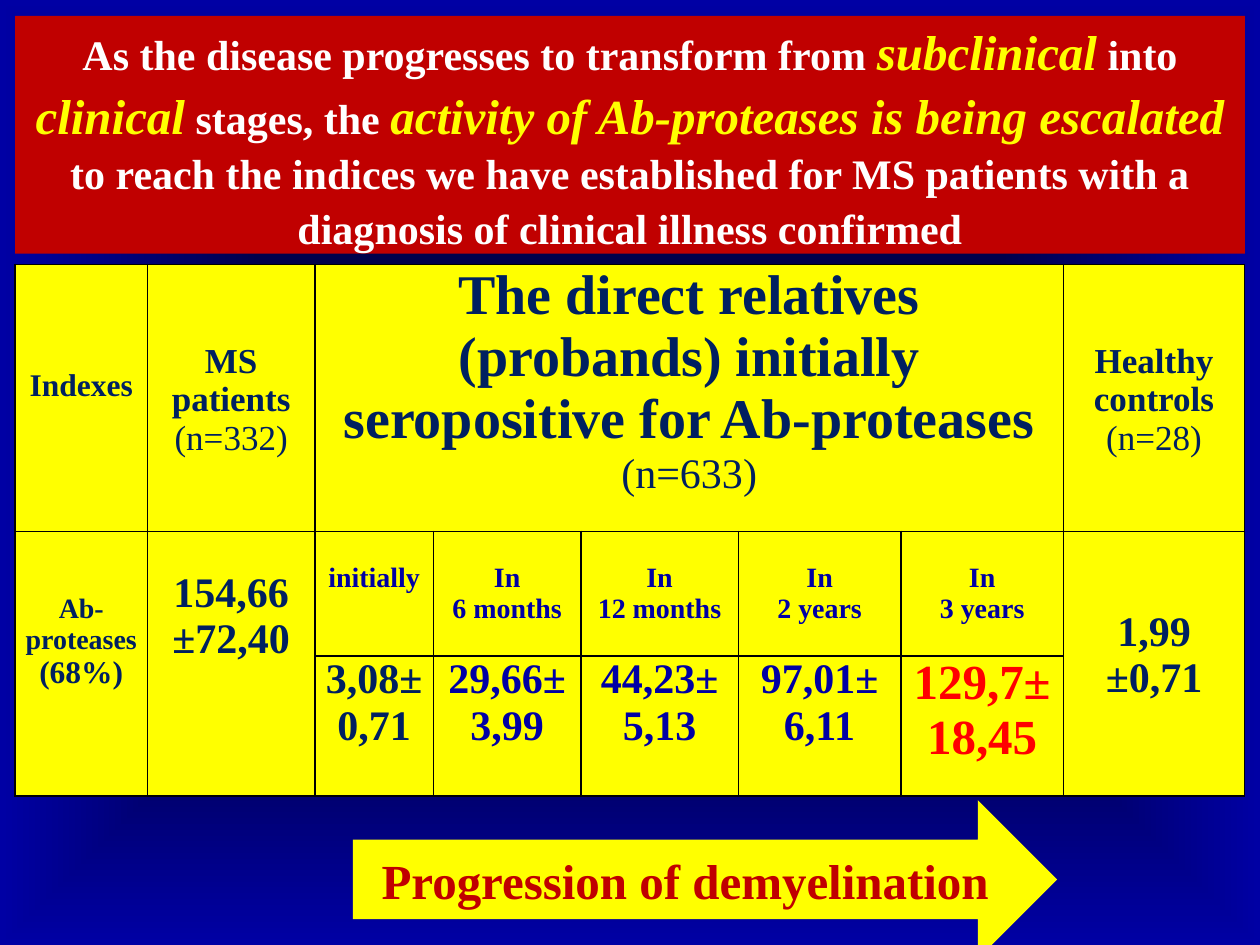
from pptx import Presentation
from pptx.dml.color import RGBColor
from pptx.enum.shapes import MSO_SHAPE
from pptx.enum.text import MSO_ANCHOR, PP_ALIGN
from pptx.oxml import parse_xml
from pptx.oxml.ns import nsdecls, qn
from pptx.util import Pt

ARROW = MSO_SHAPE.RIGHT_ARROW
MIDDLE = MSO_ANCHOR.MIDDLE
CENTER = PP_ALIGN.CENTER

FONT = "Times New Roman"
LINE = 1.107
COLORS = {
    "black": "000000", "blue": "0000A4", "navy": "002060", "white": "FFFFFF",
    "yellow": "FFFF00", "crimson": "C00000", "red": "FF0000",
}


def rgb(name):
    return RGBColor.from_string(COLORS[name])


def write(par, text, size=24, color="navy", bold=True, italic=False):
    par.alignment = CENTER
    run = par.add_run()
    run.text = text
    font = run.font
    font.name, font.size = FONT, Pt(size)
    font.bold, font.italic = bold, italic
    font.color.rgb = rgb(color)


class Deck:
    def __init__(self, wide, high):
        self.prs = Presentation()
        self.prs.slide_width, self.prs.slide_height = Pt(wide), Pt(high)
        self.slide = self.prs.slides.add_slide(self.prs.slide_layouts[5])

    def backdrop(self, inner, outer):
        fill = self.slide.background.fill
        fill.gradient()
        for stop, name in zip(fill.gradient_stops, (inner, outer)):
            stop.color.rgb = rgb(name)
        grad = self.slide._element.find(".//" + qn("a:gradFill"))
        path = parse_xml(
            f'<a:path {nsdecls("a")} path="shape">'
            '<a:fillToRect l="50000" t="50000" r="50000" b="50000"/></a:path>')
        grad.replace(grad.find(qn("a:lin")), path)

    def place(self, shape, box, fill):
        shape.left, shape.top, shape.width, shape.height = map(Pt, box)
        shape.fill.solid()
        shape.fill.fore_color.rgb = rgb(fill)
        frame = shape.text_frame
        frame.word_wrap = True
        frame.vertical_anchor = MIDDLE
        return frame.paragraphs[0]

    def title(self, box, parts, fill):
        par = self.place(self.slide.shapes.title, box, fill)
        par.line_spacing = 1.08
        for text, key in parts:
            if key:
                write(par, text, size=28, color="yellow", italic=True)
            else:
                write(par, text, color="white")

    def arrow(self, box, text, fill, **style):
        shape = self.slide.shapes.add_shape(ARROW, *map(Pt, box))
        shape.shadow.inherit = False
        shape.line.fill.background()
        write(self.place(shape, box, fill), text, **style)

    def border(self, cell):
        props = cell._tc.get_or_add_tcPr()
        for spot, side in enumerate(("lnL", "lnR", "lnT", "lnB")):
            props.insert(spot, parse_xml(
                f'<a:{side} {nsdecls("a")} w="{Pt(1)}"><a:solidFill>'
                f'<a:srgbClr val="{COLORS["black"]}"/></a:solidFill></a:{side}>'))

    def table(self, left, top, cols, rows, fill):
        grid = self.slide.shapes.add_table(
            len(rows), len(cols), Pt(left), Pt(top), Pt(sum(cols)), Pt(sum(rows))).table
        for col, width in zip(grid.columns, cols):
            col.width = Pt(width)
        for row, height in zip(grid.rows, rows):
            row.height = Pt(height)
        for cell in grid.iter_cells():
            cell.fill.solid()
            cell.fill.fore_color.rgb = rgb(fill)
            cell.margin_left = cell.margin_right = Pt(5)
            cell.margin_top = cell.margin_bottom = 0
            self.border(cell)
        return grid

    def fill_cell(self, cell, lines, drop=0):
        cell.margin_top = Pt(round(drop * LINE, 2))
        frame = cell.text_frame
        for spot, (text, style) in enumerate(lines):
            par = frame.add_paragraph() if spot else frame.paragraphs[0]
            write(par, text, **style)


def main():
    deck = Deck(720, 540)
    deck.backdrop("black", "blue")
    deck.title((8.64, 9, 702.72, 136), [
        ("As the disease progresses to transform from ", False),
        ("subclinical", True),
        (" into ", False),
        ("clinical", True),
        (" stages, the ", False),
        ("activity of Ab-proteases is being escalated ", True),
        ("to reach the indices we have established for MS patients "
         "with a diagnosis of clinical illness confirmed", False),
    ], "crimson")

    grid = deck.table(8.64, 151, [75.6, 95.8, 67.7, 84.2, 90, 92.9, 92.9, 103.6],
                      [152.6, 71.4, 80], "yellow")
    grid.cell(0, 2).merge(grid.cell(0, 6))
    for col in (0, 1, 7):
        grid.cell(1, col).merge(grid.cell(2, col))

    big, mid, small = {"size": 24}, {"size": 18}, {"size": 16}
    head, count = {"size": 20}, {"size": 20, "bold": False}
    fixed = [
        (0, 0, 54, [("Indexes", mid)]),
        (0, 1, 40, [("MS patients", head), ("(n=332)", count)]),
        (0, 2, 0, [("The direct relatives (probands) initially seropositive "
                    "for Ab-proteases", {"size": 32}),
                   ("(n=633)", {"size": 24, "bold": False})]),
        (0, 7, 40, [("Healthy controls", head), ("(n=28)", count)]),
        (1, 0, 32, [("Ab-proteases", small), ("(68%)", mid)]),
        (1, 1, 20, [("154,66", big), ("±72,40", big)]),
        (1, 7, 40, [("1,99", big), ("±0,71", big)]),
    ]
    for row, col, drop, lines in fixed:
        deck.fill_cell(grid.cell(row, col), lines, drop)

    blue = {"size": 24, "color": "blue"}
    stages = [
        (["initially"], "3,08±", "0,71", big),
        (["In", "6 months"], "29,66±", "3,99", blue),
        (["In", "12 months"], "44,23±", "5,13", blue),
        (["In", "2 years"], "97,01±", "6,11", blue),
        (["In", "3 years"], "129,7±", "18,45", {"size": 28, "color": "red"}),
    ]
    for col, (label, mean, error, style) in enumerate(stages, 2):
        names = [(text, {"size": 16, "color": "blue"}) for text in label]
        deck.fill_cell(grid.cell(1, col), names, 16)
        deck.fill_cell(grid.cell(2, col), [(mean, style), (error, style)])

    deck.arrow((201.6, 457.2, 402.5, 90.7), "Progression of demyelination",
               "yellow", size=28, color="crimson")
    deck.prs.save("out.pptx")


if __name__ == "__main__":
    main()
